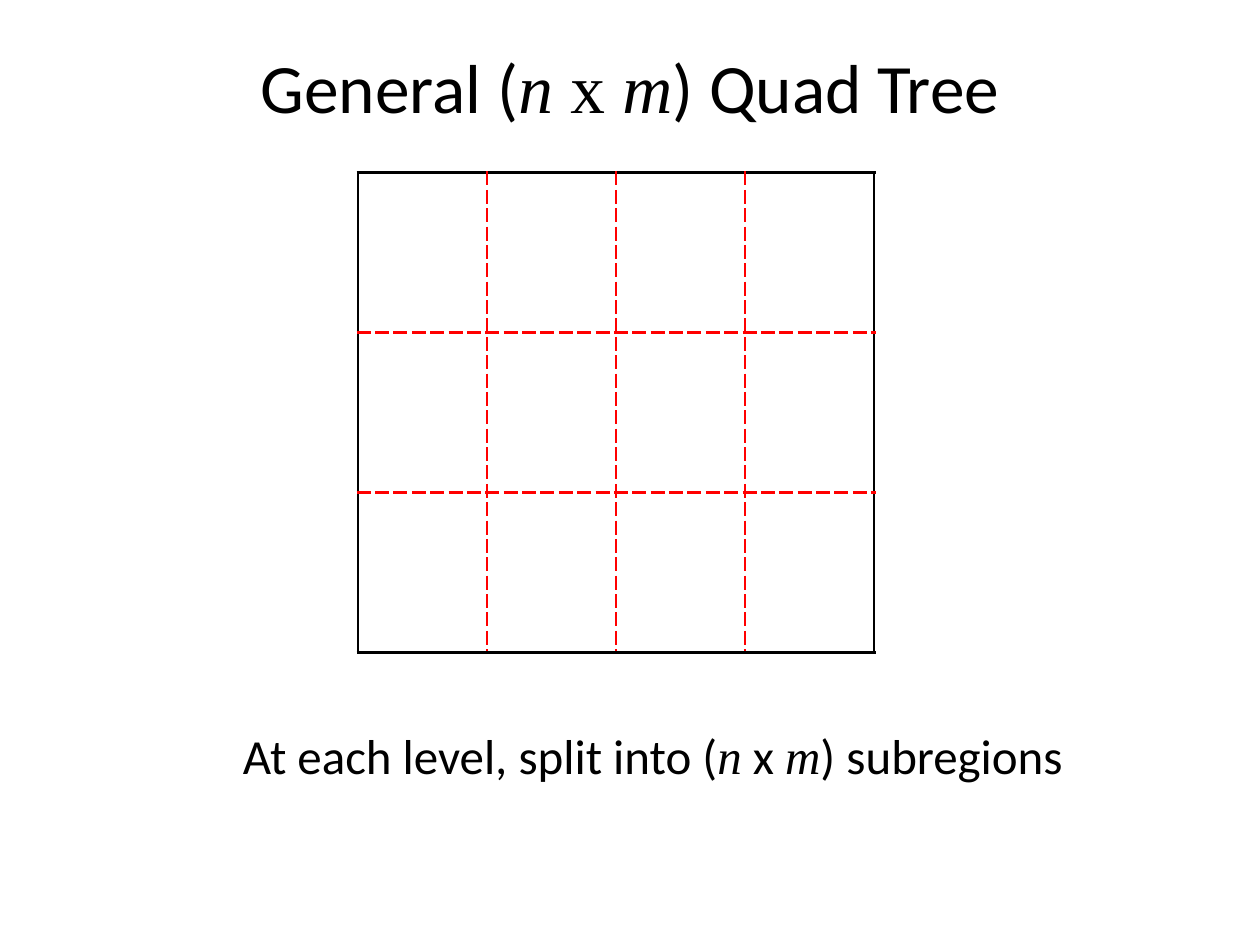
from dataclasses import dataclass

from lxml import etree
from pptx import Presentation
from pptx.dml.color import RGBColor
from pptx.enum.text import MSO_ANCHOR, MSO_AUTO_SIZE, PP_ALIGN
from pptx.oxml.ns import qn
from pptx.util import Inches, Pt

MIDDLE, TOP = MSO_ANCHOR.MIDDLE, MSO_ANCHOR.TOP
CENTER, LEFT = PP_ALIGN.CENTER, PP_ALIGN.LEFT
NO_FIT = MSO_AUTO_SIZE.NONE
BLANK = 6


@dataclass(frozen=True)
class Theme:
    ink: str = "000000"
    split: str = "FF0000"
    sans: str = "Calibri"
    serif: str = "Times New Roman"
    title: float = 39.6
    body: float = 28
    line: float = 1.5


THEME = Theme()


@dataclass(frozen=True)
class Box:
    left: float
    top: float
    width: float
    height: float

    def emu(self) -> tuple:
        return tuple(map(Inches, (self.left, self.top, self.width, self.height)))


@dataclass(frozen=True)
class Piece:
    text: str
    font: str = THEME.sans
    italic: bool = False


@dataclass(frozen=True)
class Label:
    box: Box
    pieces: tuple
    size: float
    align: PP_ALIGN
    anchor: MSO_ANCHOR
    wrap: bool


@dataclass(frozen=True)
class Edge:
    color: str
    dash: str


OUTER = Edge(THEME.ink, "solid")
INNER = Edge(THEME.split, "sysDash")
N = Piece("n", THEME.serif, True)
M = Piece("m", THEME.serif, True)

LABELS = (
    Label(
        Box(0.5, 0.3, 9, 0.76),
        (Piece("General ("), N, Piece(" x ", THEME.serif), M, Piece(") Quad Tree")),
        THEME.title, CENTER, MIDDLE, True,
    ),
    Label(
        Box(1.83, 5.71, 6.81, 0.57),
        (Piece("At each level, split into ("), N, Piece(" x "), M, Piece(") subregions")),
        THEME.body, LEFT, TOP, False,
    ),
)
GRID = Box(2.84, 1.37, 4.1, 3.81)
ROWS, COLS = 3, 4


def add_label(slide, label: Label) -> None:
    frame = slide.shapes.add_textbox(*label.box.emu()).text_frame
    frame.auto_size = NO_FIT
    frame.word_wrap = label.wrap
    frame.vertical_anchor = label.anchor
    line = frame.paragraphs[0]
    line.alignment = label.align
    for piece in label.pieces:
        run = line.add_run()
        run.text = piece.text
        run.font.name = piece.font
        run.font.size = Pt(label.size)
        run.font.italic = piece.italic
        run.font.color.rgb = RGBColor.from_string(THEME.ink)


def set_edges(cell, edges: dict) -> None:
    """Put the border lines ahead of the fill, as the schema asks."""
    props = cell._tc.get_or_add_tcPr()
    for spot, (side, edge) in enumerate(edges.items()):
        line = etree.Element(qn(f"a:ln{side}"), w=str(Pt(THEME.line)))
        fill = etree.SubElement(line, qn("a:solidFill"))
        etree.SubElement(fill, qn("a:srgbClr"), val=edge.color)
        etree.SubElement(line, qn("a:prstDash"), val=edge.dash)
        props.insert(spot, line)


def add_grid(slide, box: Box, rows: int, cols: int) -> None:
    """Draw a table with a solid frame and dashed splits."""
    table = slide.shapes.add_table(rows, cols, *box.emu()).table
    table.first_row = False
    table.horz_banding = False
    for row in range(rows):
        for col in range(cols):
            cell = table.cell(row, col)
            cell.fill.background()
            rim = {
                "L": col == 0,
                "R": col == cols - 1,
                "T": row == 0,
                "B": row == rows - 1,
            }
            set_edges(cell, {s: OUTER if out else INNER for s, out in rim.items()})


def main() -> None:
    deck = Presentation()
    deck.slide_width, deck.slide_height = Inches(10), Inches(7.5)
    slide = deck.slides.add_slide(deck.slide_layouts[BLANK])
    title, note = LABELS
    add_label(slide, title)
    add_grid(slide, GRID, ROWS, COLS)
    add_label(slide, note)
    deck.save("out.pptx")


if __name__ == "__main__":
    main()
